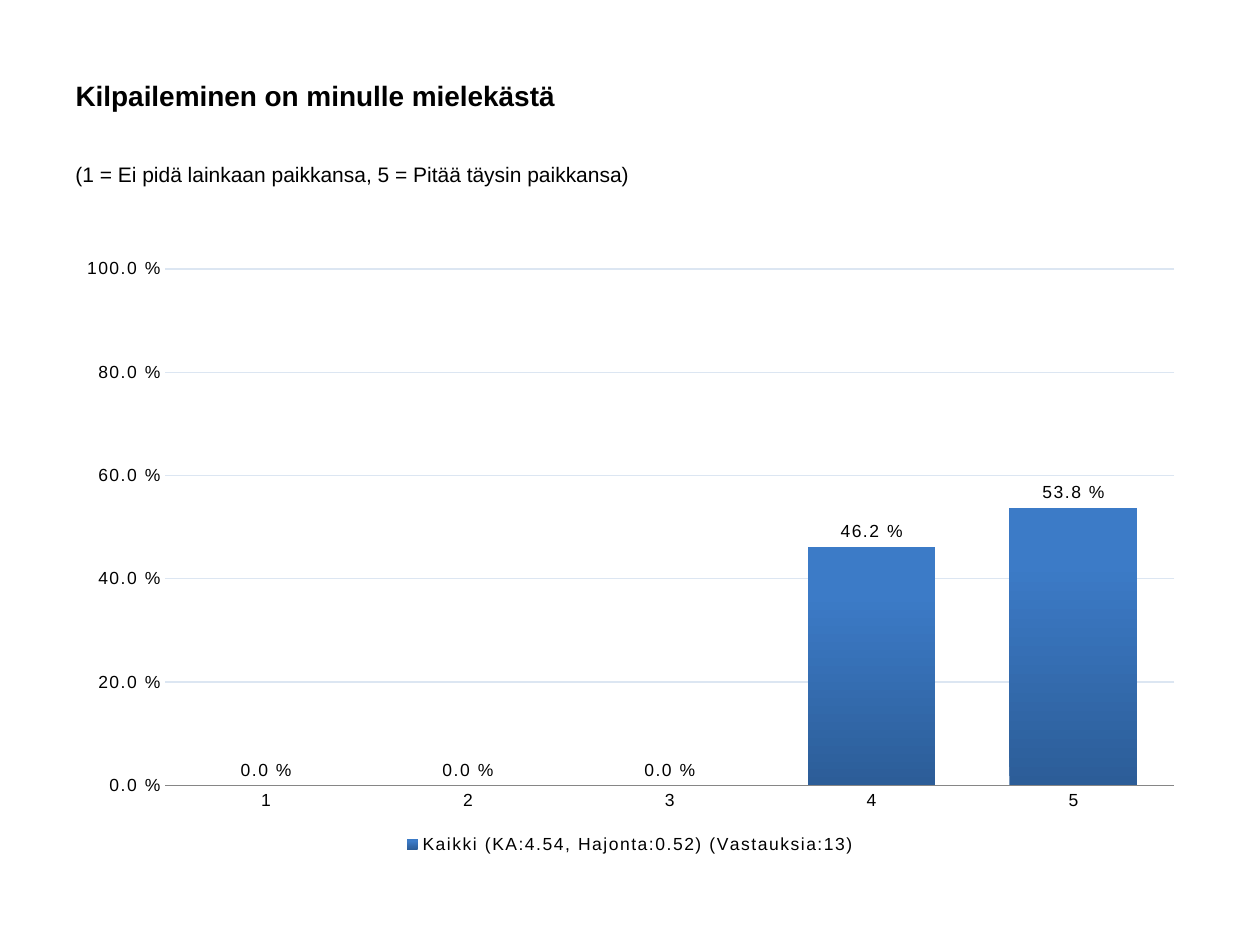
from lxml.etree import SubElement
from pptx import Presentation
from pptx.chart.data import CategoryChartData as Data
from pptx.dml.color import RGBColor as RGB
from pptx.enum.chart import XL_CHART_TYPE as Kind, XL_LABEL_POSITION as Spot
from pptx.enum.chart import XL_LEGEND_POSITION as Side, XL_TICK_MARK as Tick
from pptx.enum.text import MSO_ANCHOR as Anchor, PP_ALIGN as Align
from pptx.oxml.ns import qn
from pptx.util import Inches, Pt

HUES = {"ink": "000000", "grid": "DCE6F2", "axis": "868686",
        "low": "2C5D98", "high": "3C7BC7"}
FORM = "0.0\\ %"


def hue(name):
    """Return a named colour."""
    return RGB.from_string(HUES[name])


def style(font, size=10, bold=False):
    """Set the face, size and colour of a font."""
    font.name, font.size, font.bold = "Arial", Pt(size), bold
    font.color.rgb = hue("ink")


def write(shape, text, size=12, bold=False, anchor=Anchor.TOP, before=0):
    """Put one formatted line of text into a shape."""
    frame = shape.text_frame
    frame.word_wrap, frame.vertical_anchor = True, anchor
    para = frame.paragraphs[0]
    para.alignment, para.space_before = Align.LEFT, Pt(before)
    run = para.add_run()
    run.text = text
    style(run.font, size, bold)


def place(plot, **parts):
    """Fix the inner plot area by fractions of the chart."""
    area = plot.find(qn("c:layout"))
    if area is None:
        area = SubElement(plot, qn("c:layout"))
        plot.insert(0, area)
    box = SubElement(area, qn("c:manualLayout"))
    rules = {"layoutTarget": "inner", "xMode": "edge", "yMode": "edge"}
    for key, val in {**rules, **parts}.items():
        SubElement(box, qn("c:" + key)).set("val", str(val))


def scale(chart):
    """Format both axes and the grid."""
    for axis in (chart.category_axis, chart.value_axis):
        axis.major_tick_mark = axis.minor_tick_mark = Tick.NONE
        style(axis.tick_labels.font)
    chart.category_axis.format.line.color.rgb = hue("axis")
    axis = chart.value_axis
    axis.minimum_scale, axis.maximum_scale, axis.major_unit = 0, 1, 0.2
    axis.tick_labels.number_format = FORM
    axis.tick_labels.number_format_is_linked = False
    axis.format.line.fill.background()
    line = axis.major_gridlines.format.line
    line.width, line.color.rgb = Pt(0.75), hue("grid")


def paint(plot):
    """Format the columns and their labels."""
    plot.gap_width, plot.vary_by_categories = 58, False
    fill = plot.series[0].format.fill
    fill.gradient()
    fill.gradient_angle = 90
    for stop, name, pos in zip(fill.gradient_stops, ("low", "high"), (0, 0.8)):
        stop.color.rgb, stop.position = hue(name), pos
    tags = plot.series[0].data_labels
    tags.show_value, tags.position = True, Spot.OUTSIDE_END
    tags.number_format, tags.number_format_is_linked = FORM, False
    style(tags.font)


def graph(slide):
    """Add the column chart of answers."""
    data = Data(number_format=FORM)
    data.categories = ["1", "2", "3", "4", "5"]
    data.add_series("Kaikki (KA:4.54, Hajonta:0.52) (Vastauksia:13)",
                    (0, 0, 0, 0.462, 0.538))
    chart = slide.shapes.add_chart(
        Kind.COLUMN_CLUSTERED, Inches(0.5), Inches(1.94),
        Inches(9), Inches(4.88), data).chart
    chart.has_title = False
    style(chart.font)
    chart.font.name = "Calibri"
    scale(chart)
    paint(chart.plots[0])
    chart.has_legend = True
    chart.legend.position = Side.BOTTOM
    chart.legend.include_in_layout = False
    style(chart.legend.font)
    root = chart.element
    for props in root.iter(qn("a:defRPr")):
        props.set("spc", "100")
    place(next(root.iter(qn("c:plotArea"))), x=0.09, y=0.04, w=0.89, h=0.84)


def main():
    """Build and save the slide."""
    deck = Presentation()
    deck.slide_width, deck.slide_height = Inches(10), Inches(7.5)
    slide = deck.slides.add_slide(deck.slide_layouts[5])
    title = slide.shapes.title
    title.left, title.top = Inches(0.5), Inches(0.36)
    title.width, title.height = Inches(9), Inches(0.79)
    write(title, "Kilpaileminen on minulle mielekästä",
          size=16, bold=True, anchor=Anchor.MIDDLE)
    note = slide.shapes.add_textbox(
        Inches(0.5), Inches(1.23), Inches(9), Inches(0.59))
    write(note, "(1 = Ei pidä lainkaan paikkansa, 5 = Pitää täysin paikkansa)",
          before=2.4)
    graph(slide)
    deck.save("out.pptx")


if __name__ == "__main__":
    main()
